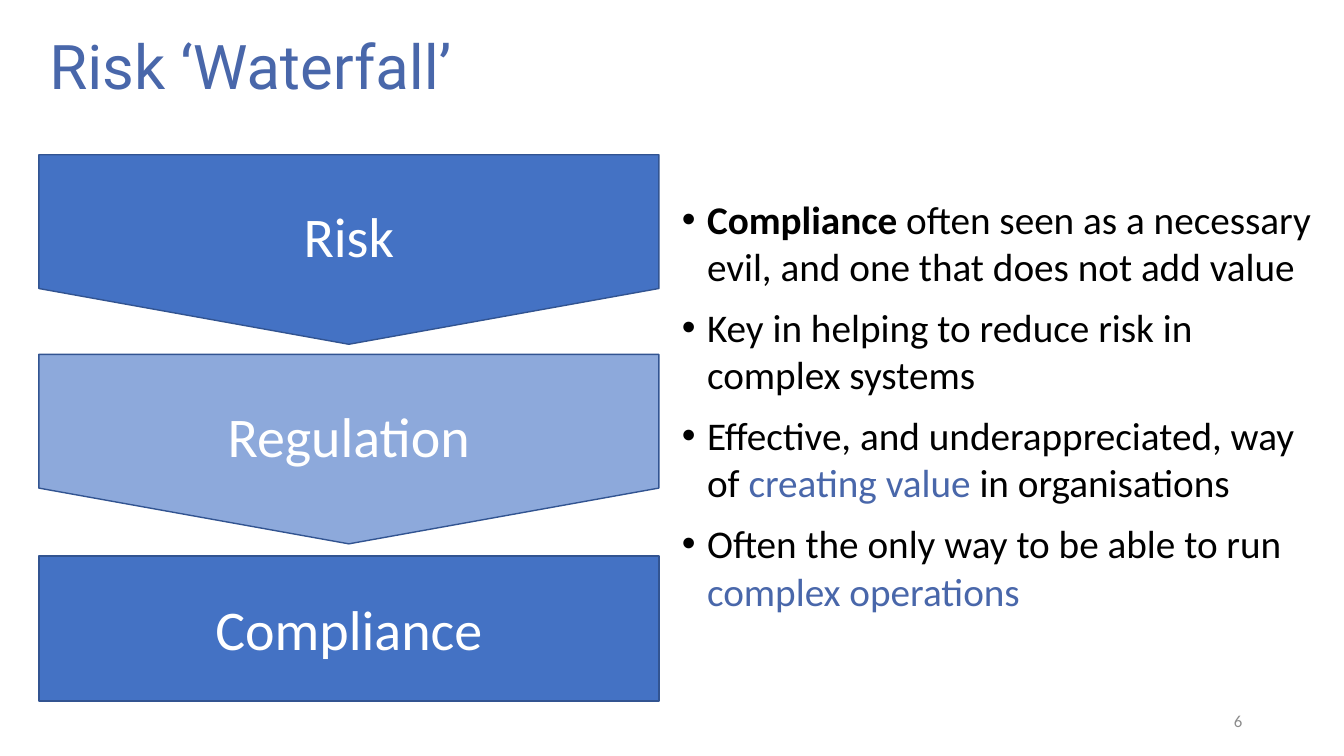
from lxml.etree import SubElement
from pptx import Presentation
from pptx.dml.color import RGBColor
from pptx.enum.shapes import MSO_SHAPE
from pptx.enum.text import MSO_ANCHOR, PP_ALIGN
from pptx.oxml.ns import qn
from pptx.util import Inches, Pt

BLUE, PALE_BLUE, OUTLINE = "4472C4", "8DA9DB", "325491"
ACCENT, BLACK, WHITE, GREY = "4967AA", "000000", "FFFFFF", "8C8C8C"

STEPS = [
    ("Risk", 20.47, 25.07, BLUE, 0.294),
    ("Regulation", 46.87, 25.07, PALE_BLUE, 0.294),
    ("Compliance", 73.53, 19.2, BLUE, 0),
]
POINTS = [
    [("Compliance ", {"bold": True}),
     ("often seen as a necessary evil, and one that does not add value", {})],
    [("Key in helping to reduce risk in complex systems", {})],
    [("Effective, and underappreciated, way of ", {}),
     ("creating value ", {"color": ACCENT}), ("in organisations", {})],
    [("Often the only way to be able to run ", {}),
     ("complex operations", {"color": ACCENT})],
]


def rgb(color):
    return RGBColor.from_string(color)


def add_text(paragraph, text, size=28, color=BLACK, font="Calibri", bold=False):
    run = paragraph.add_run()
    run.text = text
    run.font.name = font
    run.font.size = Pt(size)
    run.font.bold = bold
    run.font.color.rgb = rgb(color)


class SlideBuilder:
    """Draws styled elements on one slide, with lengths in percent of its size."""

    def __init__(self, presentation):
        self.width = presentation.slide_width
        self.height = presentation.slide_height
        self.slide = presentation.slides.add_slide(presentation.slide_layouts[6])

    def across(self, share):
        return round(self.width * share / 100)

    def down(self, share):
        return round(self.height * share / 100)

    def frame(self, left, top, width, height):
        box = self.slide.shapes.add_textbox(
            self.across(left), self.down(top), self.across(width), self.down(height))
        box.text_frame.word_wrap = True
        box.text_frame.vertical_anchor = MSO_ANCHOR.MIDDLE
        return box.text_frame

    def label(self, text, *place, align=PP_ALIGN.LEFT, spacing=1.0, **style):
        paragraph = self.frame(*place).paragraphs[0]
        paragraph.alignment = align
        paragraph.line_spacing = spacing
        add_text(paragraph, text, **style)

    def bullets(self, points, *place, bottom_inset=0.05):
        text_frame = self.frame(*place)
        text_frame.margin_bottom = Inches(bottom_inset)
        for index, runs in enumerate(points):
            paragraph = text_frame.add_paragraph() if index else text_frame.paragraphs[0]
            paragraph.space_before = Pt(10)
            properties = paragraph._p.get_or_add_pPr()
            properties.set("marL", str(Inches(0.25)))
            properties.set("indent", str(-Inches(0.25)))
            SubElement(properties, qn("a:buFont")).set("typeface", "Arial")
            SubElement(properties, qn("a:buChar")).set("char", "•")
            for text, style in runs:
                add_text(paragraph, text, **style)

    def step(self, text, left, top, width, height, fill, point):
        """Draws a downward pentagon, turned a quarter about its centre."""
        length, breadth = self.down(height), self.across(width)
        turn = (breadth - length) // 2
        shape = self.slide.shapes.add_shape(
            MSO_SHAPE.PENTAGON, self.across(left) + turn, self.down(top) - turn,
            length, breadth)
        shape.rotation = 90
        shape.adjustments[0] = point
        shape.shadow.inherit = False
        shape.fill.solid()
        shape.fill.fore_color.rgb = rgb(fill)
        shape.line.color.rgb = rgb(OUTLINE)
        shape.line.width = Pt(1)
        text_frame = shape.text_frame
        text_frame.word_wrap = True
        text_frame.vertical_anchor = MSO_ANCHOR.MIDDLE
        text_frame._txBody.bodyPr.set("vert", "vert270")
        paragraph = text_frame.paragraphs[0]
        paragraph.alignment = PP_ALIGN.CENTER
        add_text(paragraph, text, size=40, color=WHITE)


def main():
    presentation = Presentation()
    presentation.slide_width = Inches(13.33)
    presentation.slide_height = Inches(7.5)
    builder = SlideBuilder(presentation)
    builder.label("Risk ‘Waterfall’", 2.93, 1.2, 86.27, 16,
                  spacing=0.9, size=44, color=ACCENT, font="Roboto")
    builder.bullets(POINTS, 50, 22.53, 49.2, 70.13, bottom_inset=0.66)
    builder.label("6", 70.67, 92.67, 22.5, 5.33,
                  align=PP_ALIGN.RIGHT, size=12, color=GREY)
    for text, top, height, fill, point in STEPS:
        builder.step(text, 2.89, top, 46.13, height, fill, point)
    presentation.save("out.pptx")


if __name__ == "__main__":
    main()
